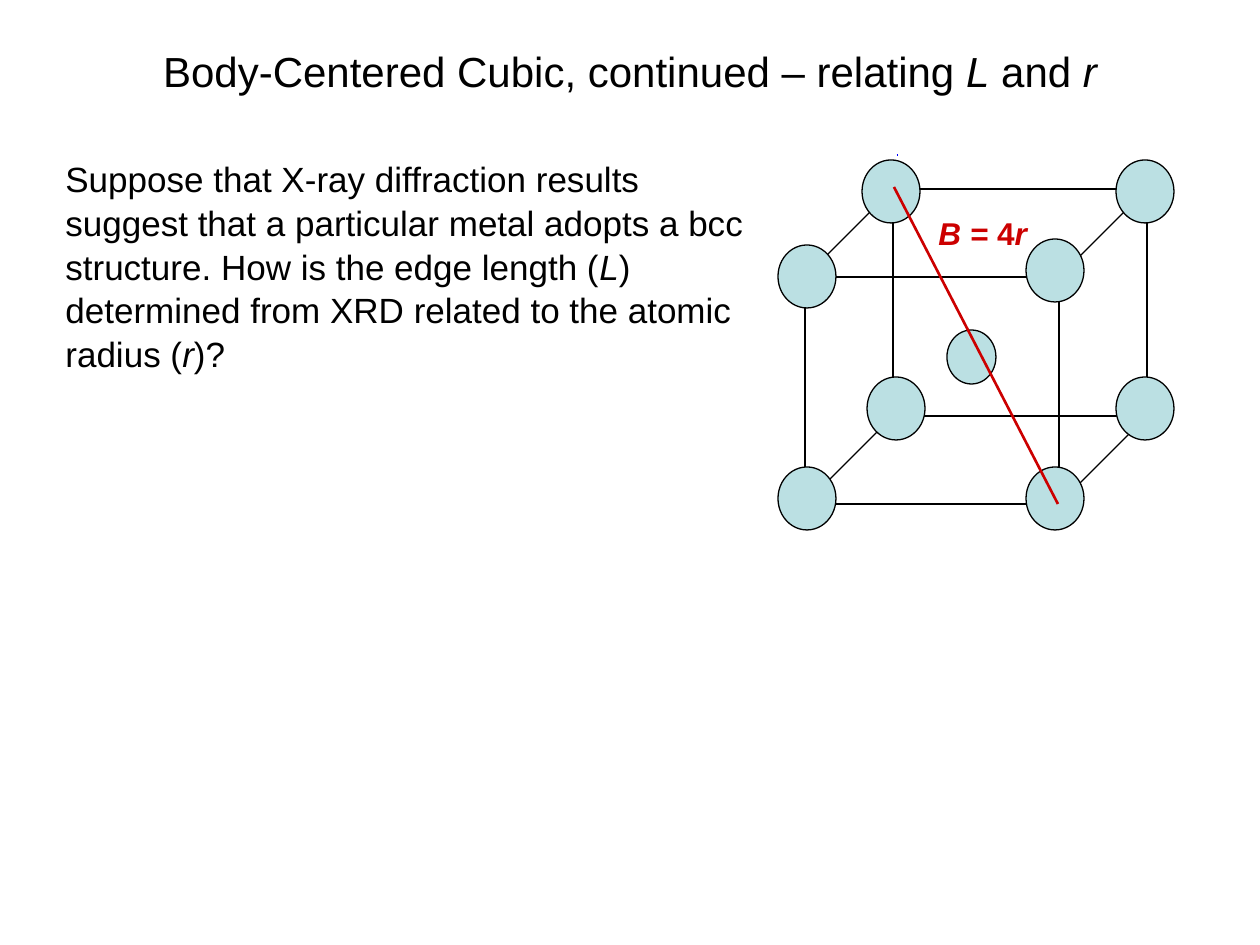
from lxml import etree
from pptx import Presentation
from pptx.dml.color import RGBColor
from pptx.enum.shapes import MSO_CONNECTOR, MSO_SHAPE
from pptx.enum.text import MSO_ANCHOR, MSO_AUTO_SIZE, PP_ALIGN
from pptx.oxml.ns import qn
from pptx.util import Emu, Pt

OVAL, RECT = MSO_SHAPE.OVAL, MSO_SHAPE.RECTANGLE
STRAIGHT = MSO_CONNECTOR.STRAIGHT
CENTER, LEFT = PP_ALIGN.CENTER, PP_ALIGN.LEFT
MIDDLE, TOP = MSO_ANCHOR.MIDDLE, MSO_ANCHOR.TOP
NO_AUTOFIT = MSO_AUTO_SIZE.NONE

BLACK = RGBColor(0x00, 0x00, 0x00)
RED = RGBColor(0xCC, 0x00, 0x00)
BLUE = RGBColor(0x00, 0x00, 0xFF)
ATOM_FILL = RGBColor(0xBB, 0xE0, 0xE3)

FONT = "Arial"
PX_PER_INCH = 126
TITLE_ONLY = 5


def px(length):
    return Emu(round(length * 914400 / PX_PER_INCH))


def write_runs(frame, runs, size, color, bold=False, align=LEFT, anchor=TOP):
    """Fill the frame with one paragraph of (text, italic) runs."""
    frame.word_wrap = True
    frame.auto_size = NO_AUTOFIT
    frame.vertical_anchor = anchor
    paragraph = frame.paragraphs[0]
    paragraph.alignment = align
    for text, italic in runs:
        run = paragraph.add_run()
        run.text = text
        font = run.font
        font.name, font.size = FONT, Pt(size)
        font.bold, font.italic = bold, italic
        font.color.rgb = color
    return paragraph


def add_outlined(slide, preset, left, top, width, height, fill=None):
    outlined = slide.shapes.add_shape(
        preset, px(left), px(top), px(width), px(height))
    outlined.shadow.inherit = False
    if fill is None:
        outlined.fill.background()
    else:
        outlined.fill.solid()
        outlined.fill.fore_color.rgb = fill
    outlined.line.color.rgb = BLACK
    outlined.line.width = Pt(0.75)


def add_line(slide, start, end, color, width):
    line = slide.shapes.add_connector(
        STRAIGHT, px(start[0]), px(start[1]), px(end[0]), px(end[1]))
    line.line.color.rgb = color
    line.line.width = Pt(width)
    etree.SubElement(line._element.spPr, qn("a:effectLst"))


def add_title(slide, left, top, width, height):
    title = slide.shapes.title
    title.left, title.top = px(left), px(top)
    title.width, title.height = px(width), px(height)
    runs = [("Body-Centered Cubic, continued – relating ", False),
            ("L", True), (" and ", False), ("r", True)]
    write_runs(title.text_frame, runs, 24, BLACK, align=CENTER, anchor=MIDDLE)


def add_question(slide, left, top, width, height):
    question = slide.shapes.add_textbox(
        px(left), px(top), px(width), px(height))
    runs = [("Suppose that X-ray diffraction results suggest that a particular "
             "metal adopts a bcc structure. How is the edge length (", False),
            ("L", True),
            (") determined from XRD related to the atomic radius (", False),
            ("r", True), (")?", False)]
    paragraph = write_runs(question.text_frame, runs, 20, BLACK)
    paragraph.line_spacing = 1.04


def add_unit_cell(slide, left, top):
    """Draw the bcc cell: edges, nine atoms and the body diagonal."""
    edge_width, edge_height, depth = 254, 227, 88
    front_left, front_top = left + 27, top + 117
    back_left, back_top = front_left + depth, front_top - depth

    for face_left, face_top in ((back_left, back_top), (front_left, front_top)):
        add_outlined(slide, RECT, face_left, face_top, edge_width, edge_height)
    for dx in (0, edge_width):
        for dy in (0, edge_height):
            add_line(slide, (front_left + dx, front_top + dy),
                     (back_left + dx, back_top + dy), BLACK, 0.75)

    corner_atoms = [(0, 307), (248, 307), (0, 85), (248, 79),
                    (84, 0), (338, 0), (338, 217), (89, 217)]
    for dx, dy in corner_atoms:
        add_outlined(slide, OVAL, left + dx, top + dy, 58, 63, ATOM_FILL)
    add_outlined(slide, OVAL, left + 169, top + 170, 49, 54, ATOM_FILL)

    add_line(slide, (left + 116, top + 27), (left + 280, top + 344), RED, 1.5)

    speck_builder = slide.shapes.build_freeform(px(left + 119), px(top - 5))
    speck_builder.add_line_segments([(px(left + 120), px(top - 5))], close=False)
    speck = speck_builder.convert_to_shape()
    speck.shadow.inherit = False
    speck.fill.background()
    speck.line.color.rgb = BLUE
    speck.line.width = Pt(1)

    diagonal_label = slide.shapes.add_textbox(
        px(left + 148), px(top + 48), px(132), px(50))
    write_runs(diagonal_label.text_frame,
               [("B = ", True), ("4", False), ("r", True)], 18, RED, bold=True)


def main():
    deck = Presentation()
    deck.slide_width, deck.slide_height = px(1260), px(945)
    slide = deck.slides.add_slide(deck.slide_layouts[TITLE_ONLY])
    add_title(slide, 63, 28, 1134, 86)
    add_unit_cell(slide, 778, 160)
    add_question(slide, 53, 150, 709, 224)
    deck.save("out.pptx")


if __name__ == "__main__":
    main()
